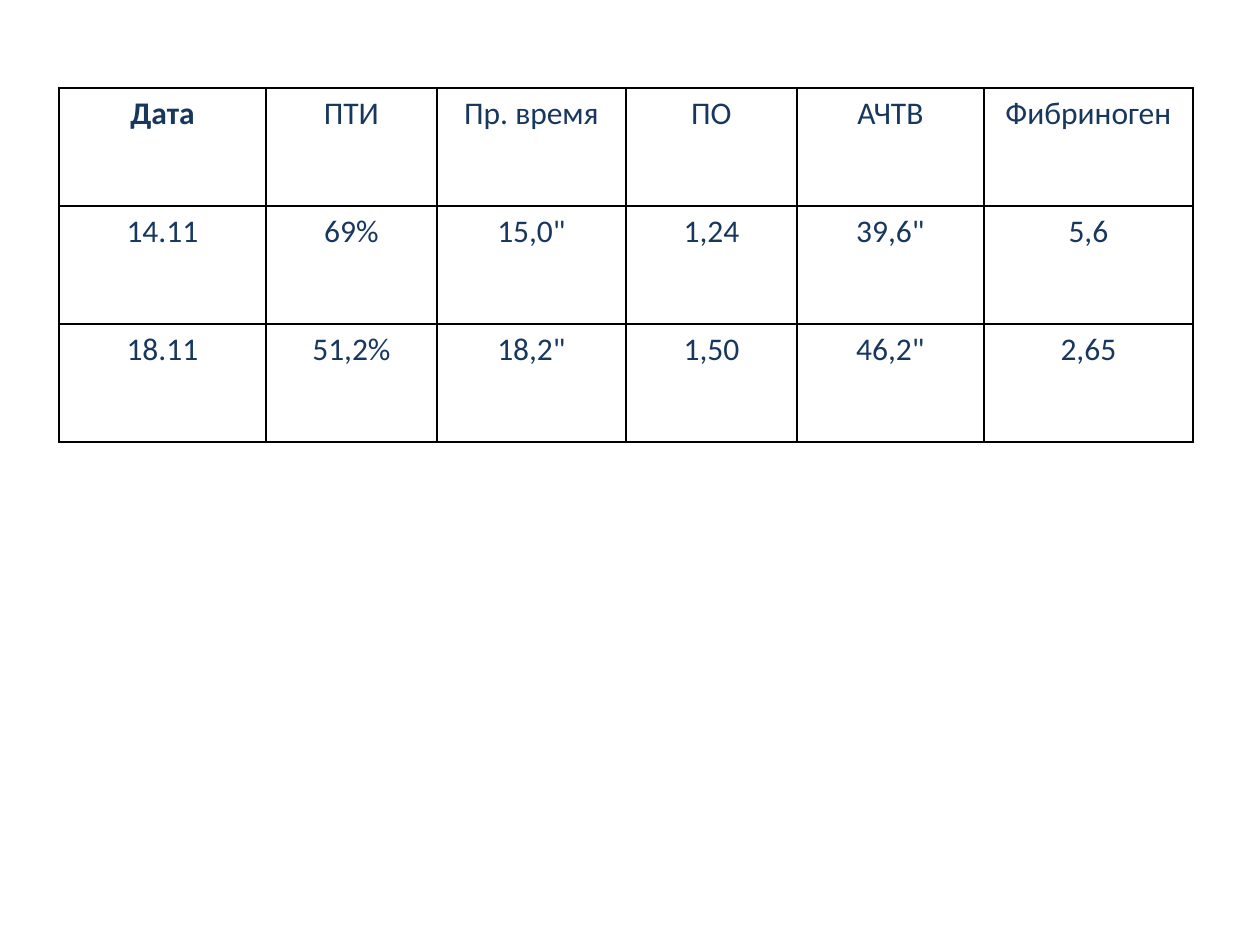
"""Build a slide with a table of coagulation test results by date."""
from lxml.etree import SubElement
from pptx import Presentation
from pptx.dml.color import RGBColor
from pptx.enum.text import PP_ALIGN
from pptx.oxml.ns import qn
from pptx.util import Pt

RESULTS = [
    ["Дата", "ПТИ", "Пр. время", "ПО", "АЧТВ", "Фибриноген"],
    ["14.11", "69%", "15,0\"", "1,24", "39,6\"", "5,6"],
    ["18.11", "51,2%", "18,2\"", "1,50", "46,2\"", "2,65"],
]
COLUMN_WIDTHS = [207, 171, 189, 171, 187, 209]
ROW_HEIGHT = 118
TABLE_LEFT, TABLE_TOP = 59, 88
SLIDE_WIDTH, SLIDE_HEIGHT = 1260, 945
TEXT_COLOR, BORDER_COLOR = "17375E", "000000"


def px(length):
    return round(length * 914400 / 126)


def color(value):
    return RGBColor.from_string(value)


def add_borders(cell):
    properties = cell._tc.get_or_add_tcPr()
    for side in ("a:lnL", "a:lnR", "a:lnT", "a:lnB"):
        line = SubElement(properties, qn(side), w=str(Pt(1)))
        fill = SubElement(line, qn("a:solidFill"))
        SubElement(fill, qn("a:srgbClr"), val=BORDER_COLOR)


def format_cell(cell, text, bold):
    add_borders(cell)
    cell.fill.background()
    cell.text = text
    paragraph = cell.text_frame.paragraphs[0]
    paragraph.alignment = PP_ALIGN.CENTER
    font = paragraph.font
    font.name = "Calibri"
    font.size = Pt(18)
    font.bold = bold
    font.color.rgb = color(TEXT_COLOR)


def add_results_table(slide):
    shape = slide.shapes.add_table(
        len(RESULTS), len(COLUMN_WIDTHS), px(TABLE_LEFT), px(TABLE_TOP),
        px(sum(COLUMN_WIDTHS)), px(ROW_HEIGHT * len(RESULTS)))
    table = shape.table
    table.first_row = False
    table.horz_banding = False
    for column, width in zip(table.columns, COLUMN_WIDTHS):
        column.width = px(width)
    for row_index, (row, values) in enumerate(zip(table.rows, RESULTS)):
        row.height = px(ROW_HEIGHT)
        for column_index, (cell, text) in enumerate(zip(row.cells, values)):
            format_cell(cell, text, bold=row_index == column_index == 0)


def main():
    presentation = Presentation()
    presentation.slide_width = px(SLIDE_WIDTH)
    presentation.slide_height = px(SLIDE_HEIGHT)
    slide = presentation.slides.add_slide(presentation.slide_layouts[6])
    add_results_table(slide)
    presentation.save("out.pptx")


if __name__ == "__main__":
    main()
